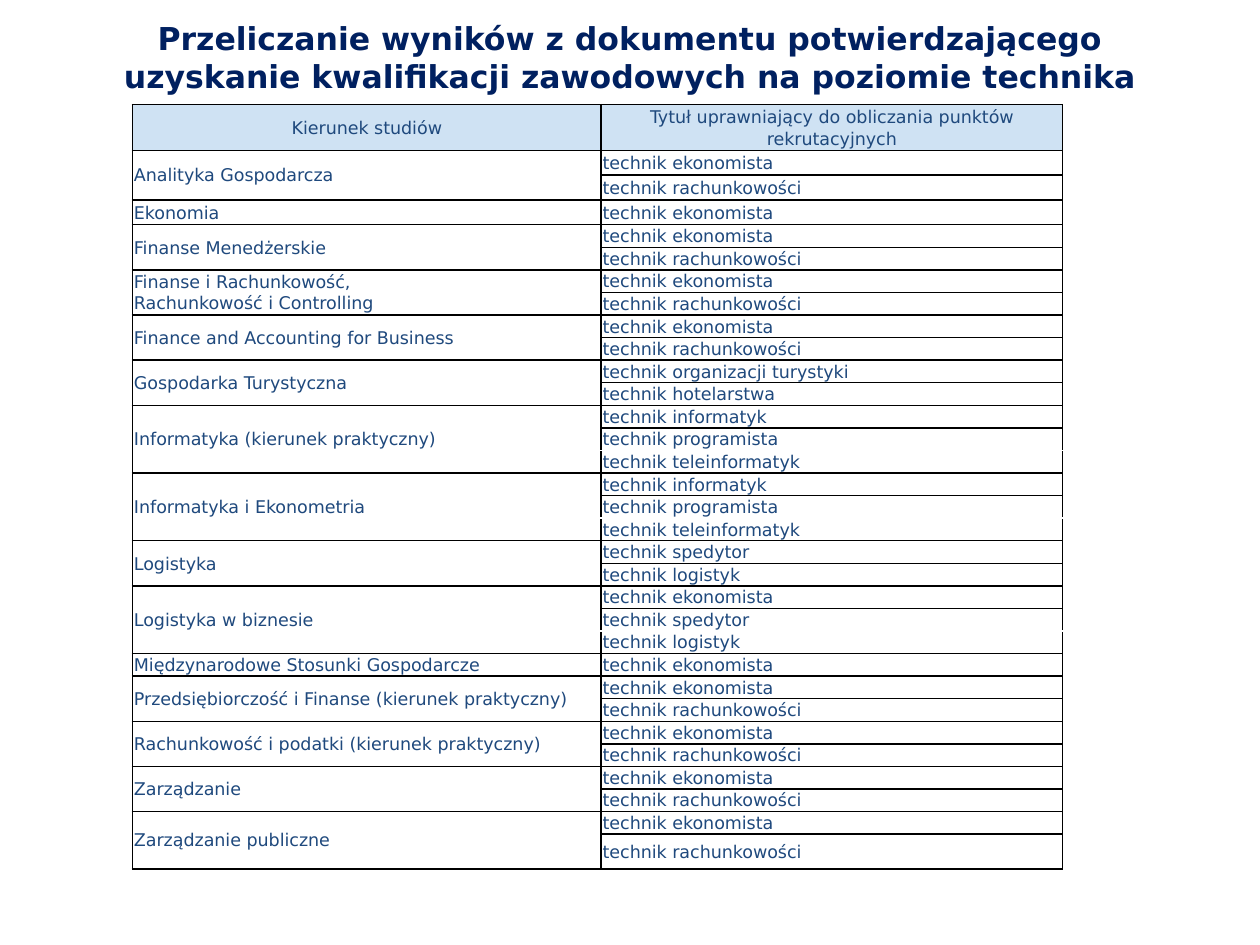
from lxml.etree import SubElement
from pptx import Presentation
from pptx.dml.color import RGBColor
from pptx.enum.text import MSO_ANCHOR as Anchor, PP_ALIGN as Align
from pptx.oxml.ns import qn
from pptx.util import Cm, Pt

NAVY = RGBColor(0x00, 0x20, 0x60)
BLUE = RGBColor(0x1F, 0x49, 0x7D)
PALE = RGBColor(0xCF, 0xE2, 0xF3)
BLACK = RGBColor(0x00, 0x00, 0x00)
FONT = "DejaVu Sans"

ACCOUNTING = ["technik ekonomista", "technik rachunkowości"]
COMPUTING = ["technik informatyk", "technik programista", "technik teleinformatyk"]
FORWARDING = ["technik spedytor", "technik logistyk"]
PROGRAMMES = [
    (["Analityka Gospodarcza"], ACCOUNTING),
    (["Ekonomia"], ["technik ekonomista"]),
    (["Finanse Menedżerskie"], ACCOUNTING),
    (["Finanse i Rachunkowość,", "Rachunkowość i Controlling"], ACCOUNTING),
    (["Finance and Accounting for Business"], ACCOUNTING),
    (["Gospodarka Turystyczna"], ["technik organizacji turystyki", "technik hotelarstwa"]),
    (["Informatyka (kierunek praktyczny)"], COMPUTING),
    (["Informatyka i Ekonometria"], COMPUTING),
    (["Logistyka"], FORWARDING),
    (["Logistyka w biznesie"], ["technik ekonomista"] + FORWARDING),
    (["Międzynarodowe Stosunki Gospodarcze"], ["technik ekonomista"]),
    (["Przedsiębiorczość i Finanse (kierunek praktyczny)"], ACCOUNTING),
    (["Rachunkowość i podatki (kierunek praktyczny)"], ACCOUNTING),
    (["Zarządzanie"], ACCOUNTING),
    (["Zarządzanie publiczne"], ACCOUNTING),
]


def write(frame, lines, size, color, align=Align.LEFT, bold=False, spacing=None):
    for index, line in enumerate(lines):
        para = frame.add_paragraph() if index else frame.paragraphs[0]
        para.alignment = align
        para.line_spacing = spacing
        span = para.add_run()
        span.text = line
        span.font.name = FONT
        span.font.size = Pt(size)
        span.font.bold = bold
        span.font.color.rgb = color


def style(cell, edges="LRTB", fill=None, side=0.03, top=0.03):
    cell.vertical_anchor = Anchor.MIDDLE
    cell.margin_left = cell.margin_right = Cm(side)
    cell.margin_top, cell.margin_bottom = Cm(top), Cm(0)
    properties = cell._tc.get_or_add_tcPr()
    for edge in edges:
        line = SubElement(properties, qn(f"a:ln{edge}"), w=str(Pt(1)))
        solid = SubElement(line, qn("a:solidFill"))
        SubElement(solid, qn("a:srgbClr"), val=str(BLACK))
    if fill:
        cell.fill.solid()
        cell.fill.fore_color.rgb = fill
    else:
        cell.fill.background()


deck = Presentation()
deck.slide_width, deck.slide_height = Cm(25.4), Cm(19.05)
page = deck.slides.add_slide(deck.slide_layouts[6])

title = page.shapes.add_textbox(Cm(1.27), Cm(0), Cm(22.86), Cm(2.31)).text_frame
title.word_wrap = True
title.vertical_anchor = Anchor.MIDDLE
write(title, ["Przeliczanie wyników z dokumentu potwierdzającego "
              "uzyskanie kwalifikacji zawodowych na poziomie technika"],
      18, NAVY, Align.CENTER, bold=True)

heights = [0.92] + [0.5] * 3 + [0.45] * 27 + [0.7]
table = page.shapes.add_table(len(heights), 2, Cm(2.67), Cm(2.11),
                              Cm(18.75), Cm(sum(heights))).table
table.first_row = False
table.horz_banding = False
for column, width in zip(table.columns, [9.45, 9.3]):
    column.width = Cm(width)
for row, height in zip(table.rows, heights):
    row.height = Cm(height)

headings = ["Kierunek studiów", "Tytuł uprawniający do obliczania punktów rekrutacyjnych"]
for column, heading in enumerate(headings):
    cell = table.cell(0, column)
    style(cell, fill=PALE, side=0.1, top=0)
    write(cell.text_frame, [heading], 10, BLUE, Align.CENTER, spacing=1.07)

first = 1
for programme, diplomas in PROGRAMMES:
    last = len(diplomas) - 1
    for index, diploma in enumerate(diplomas):
        style(table.cell(first + index, 0))
        edges = "LR" + "T" * (index < 2) + "B" * (index in (0, last))
        cell = table.cell(first + index, 1)
        style(cell, edges)
        write(cell.text_frame, [diploma], 10, BLUE)
    name = table.cell(first, 0)
    if last:
        name.merge(table.cell(first + last, 0))
    write(name.text_frame, programme, 10, BLUE)
    first += len(diplomas)

deck.save("out.pptx")
